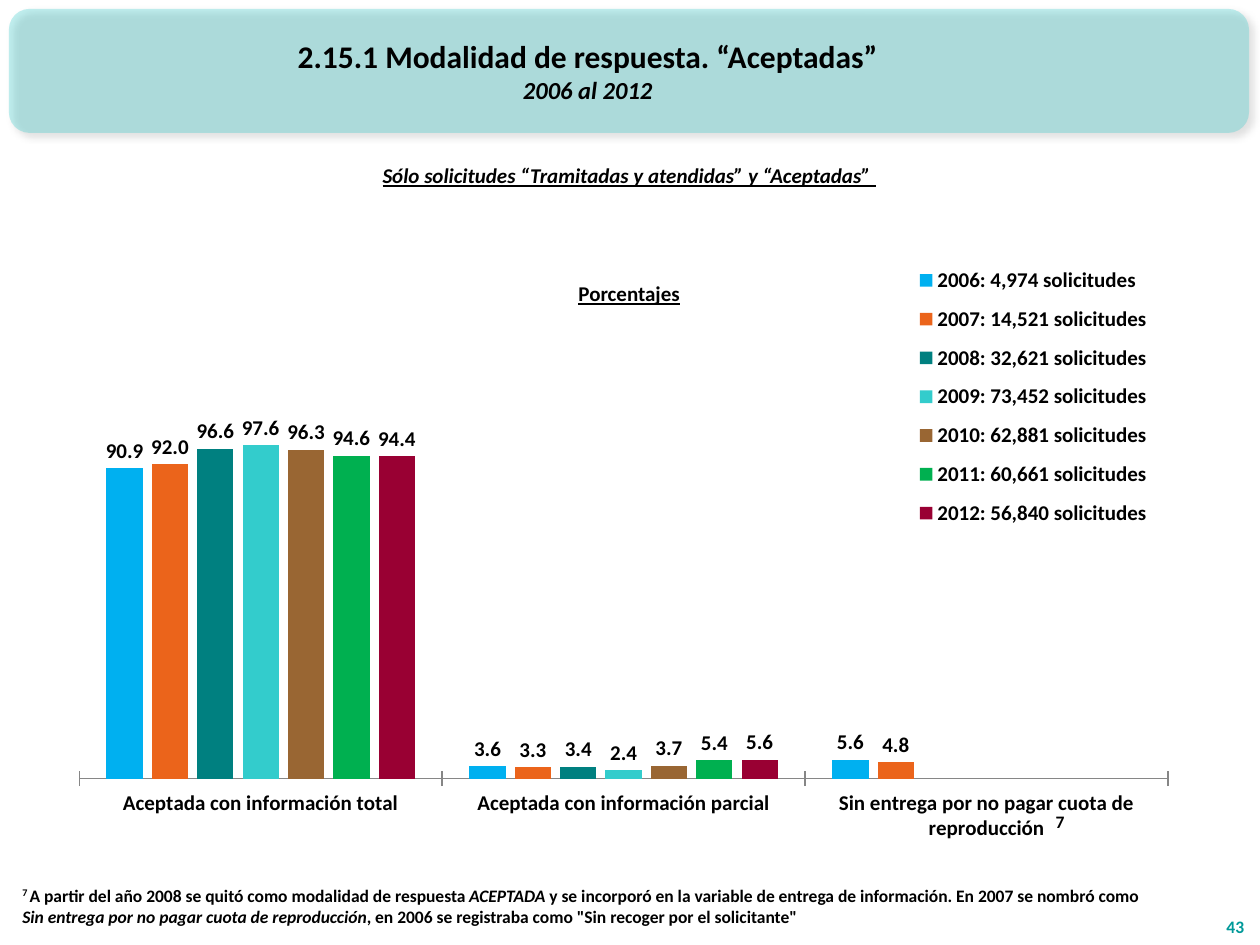
"""Build the slide on accepted requests by type of response, 2006 to 2012."""
import lxml.etree
import pptx
import pptx.chart.data
import pptx.dml.color
import pptx.enum.chart
import pptx.enum.shapes
import pptx.enum.text
import pptx.oxml
import pptx.oxml.ns
import pptx.util

Cm, Pt = pptx.util.Cm, pptx.util.Pt
qn = pptx.oxml.ns.qn
ALIGN = pptx.enum.text.PP_ALIGN
ANCHOR = pptx.enum.text.MSO_ANCHOR

COLORS = {"text": "000000", "banner": "33CCCC", "number": "009999", "axis": "868686"}
CATEGORIES = [
    "Aceptada con información total",
    "Aceptada con información parcial",
    "Sin entrega por no pagar cuota de reproducción",
]
SERIES = [
    ("2006: 4,974 solicitudes", "00B0F0", (90.9, 3.6, 5.6)),
    ("2007: 14,521 solicitudes", "EB641B", (92.0, 3.3, 4.8)),
    ("2008: 32,621 solicitudes", "008080", (96.6, 3.4, None)),
    ("2009: 73,452 solicitudes", "33CCCC", (97.6, 2.4, None)),
    ("2010: 62,881 solicitudes", "996633", (96.3, 3.7, None)),
    ("2011: 60,661 solicitudes", "00B050", (94.6, 5.4, None)),
    ("2012: 56,840 solicitudes", "990033", (94.4, 5.6, None)),
]


def rgb(value):
    return pptx.dml.color.RGBColor.from_string(value)


def add_text(p, text, size=12, color="text", italic=False, underline=False, raised=False):
    r = p.add_run()
    r.text = text
    f = r.font
    f.name, f.size, f.bold = "Calibri", Pt(size), True
    f.italic, f.underline = italic, underline
    f.color.rgb = rgb(COLORS[color])
    if raised:
        f._element.set("baseline", "30000")


def set_layout(element, after, **fractions):
    for old in element.findall(qn("c:layout")):
        element.remove(old)
    layout = element.makeelement(qn("c:layout"), {})
    manual = lxml.etree.SubElement(layout, qn("c:manualLayout"))
    for tag, val in fractions.items():
        lxml.etree.SubElement(manual, qn("c:" + tag), val=str(val))
    if after is None:
        element.insert(0, layout)
    else:
        element.find(qn(after)).addnext(layout)


class Deck:
    """Hold the style and the current slide."""

    def __init__(self):
        self.prs = pptx.Presentation()
        self.prs.slide_width, self.prs.slide_height = Cm(25.4), Cm(19.05)
        self.s = self.prs.slides.add_slide(self.prs.slide_layouts[5])

    def banner(self, *box):
        kind = pptx.enum.shapes.MSO_SHAPE.ROUNDED_RECTANGLE
        sp = self.s.shapes.add_shape(kind, *map(Cm, box))
        sp.fill.solid()
        sp.fill.fore_color.rgb = rgb(COLORS["banner"])
        sp.line.fill.background()
        sp.shadow.inherit = False
        props = sp._element.spPr
        fill = props.find(qn("a:solidFill"))[0]
        lxml.etree.SubElement(fill, qn("a:alpha"), val="30000")
        shadow = lxml.etree.SubElement(
            props.find(qn("a:effectLst")), qn("a:outerShdw"),
            blurRad=str(Pt(4)), dist=str(Pt(3)), dir="2700000", algn="tl", rotWithShape="0")
        black = lxml.etree.SubElement(shadow, qn("a:srgbClr"), val="000000")
        lxml.etree.SubElement(black, qn("a:alpha"), val="40000")

    def title(self, text, subtitle, *box):
        sp = self.s.shapes.title
        sp.left, sp.top, sp.width, sp.height = map(Cm, box)
        sp._element.getparent().append(sp._element)
        tf = sp.text_frame
        tf.auto_size = pptx.enum.text.MSO_AUTO_SIZE.NONE
        tf.vertical_anchor = ANCHOR.MIDDLE
        add_text(tf.paragraphs[0], text, size=18)
        add_text(tf.add_paragraph(), subtitle, size=14, italic=True)
        for p in tf.paragraphs:
            p.alignment = ALIGN.CENTER

    def text(self, runs, *box, align=ALIGN.LEFT, anchor=ANCHOR.TOP, **style):
        tf = self.s.shapes.add_textbox(*map(Cm, box)).text_frame
        tf.word_wrap = True
        tf.vertical_anchor = anchor
        p = tf.paragraphs[0]
        p.alignment = align
        for text, extra in runs:
            add_text(p, text, **style, **extra)

    def chart(self, *box):
        data = pptx.chart.data.CategoryChartData(number_format="0.0")
        data.categories = CATEGORIES
        for name, _, values in SERIES:
            data.add_series(name, values)
        kind = pptx.enum.chart.XL_CHART_TYPE.COLUMN_CLUSTERED
        chart = self.s.shapes.add_chart(kind, *map(Cm, box), data).chart
        chart.has_title = False
        f = chart.font
        f.name, f.size, f.bold = "Calibri", Pt(12), True
        f.color.rgb = rgb(COLORS["text"])

        plot = chart.plots[0]
        plot.gap_width, plot.overlap, plot.vary_by_categories = 150, -25, False
        for series, (_, color, _) in zip(plot.series, SERIES):
            series.format.fill.solid()
            series.format.fill.fore_color.rgb = rgb(color)
        plot.has_data_labels = True
        labels = plot.data_labels
        labels.show_value = True
        labels.number_format, labels.number_format_is_linked = "0.0", False
        labels.position = pptx.enum.chart.XL_LABEL_POSITION.OUTSIDE_END

        axis = chart.value_axis
        axis.visible, axis.has_major_gridlines = False, False
        axis.minimum_scale, axis.maximum_scale = 0, 105
        axis = chart.category_axis
        axis.major_tick_mark = pptx.enum.chart.XL_TICK_MARK.CROSS
        axis.format.line.color.rgb = rgb(COLORS["axis"])
        axis.format.line.width = Pt(0.75)

        chart.has_legend = True
        legend = chart.legend
        legend.position = pptx.enum.chart.XL_LEGEND_POSITION.TOP
        legend.include_in_layout = False
        set_layout(legend._element, "c:legendPos", xMode="edge", yMode="edge",
                   x=0.74, y=0.03, w=0.21, h=0.43)
        area = chart._chartSpace.find(qn("c:chart")).find(qn("c:plotArea"))
        set_layout(area, None, layoutTarget="inner", xMode="edge", yMode="edge",
                   x=0.03, y=0.28, w=0.93, h=0.54)


def main():
    deck = Deck()
    deck.banner(0.18, 0.18, 25, 2.5)
    deck.title("2.15.1 Modalidad de respuesta. “Aceptadas”", "2006 al 2012",
               0.2, 0.23, 23.3, 2.4)
    deck.chart(0.89, 4.72, 23.6, 13.39)
    deck.text([("Porcentajes", {})], 10.97, 5.54, 3.43, 0.76,
              align=ALIGN.CENTER, underline=True)
    deck.text([("43", {})], 24.31, 18, 1.02, 1.02,
              align=ALIGN.RIGHT, anchor=ANCHOR.BOTTOM, size=10, color="number")
    deck.text([("Sólo solicitudes “Tramitadas y atendidas” y “Aceptadas” ", {})],
              6.73, 3.15, 11.91, 0.76, align=ALIGN.CENTER, italic=True, underline=True)
    deck.text([
        ("7 ", {"raised": True}),
        ("A partir del año 2008 se quitó como modalidad de respuesta ", {}),
        ("ACEPTADA", {"italic": True}),
        (" y se incorporó en la variable de entrega de información. En 2007 se nombró como ", {}),
        ("Sin entrega por no pagar cuota de reproducción", {"italic": True}),
        (', en 2006 se registraba como "Sin recoger por el solicitante"', {}),
    ], 0.2, 17.7, 23.3, 1.12, anchor=ANCHOR.MIDDLE, size=10)
    deck.text([("7", {})], 21.03, 16.21, 0.66, 0.69, anchor=ANCHOR.MIDDLE, size=10)
    deck.prs.save("out.pptx")


if __name__ == "__main__":
    main()
